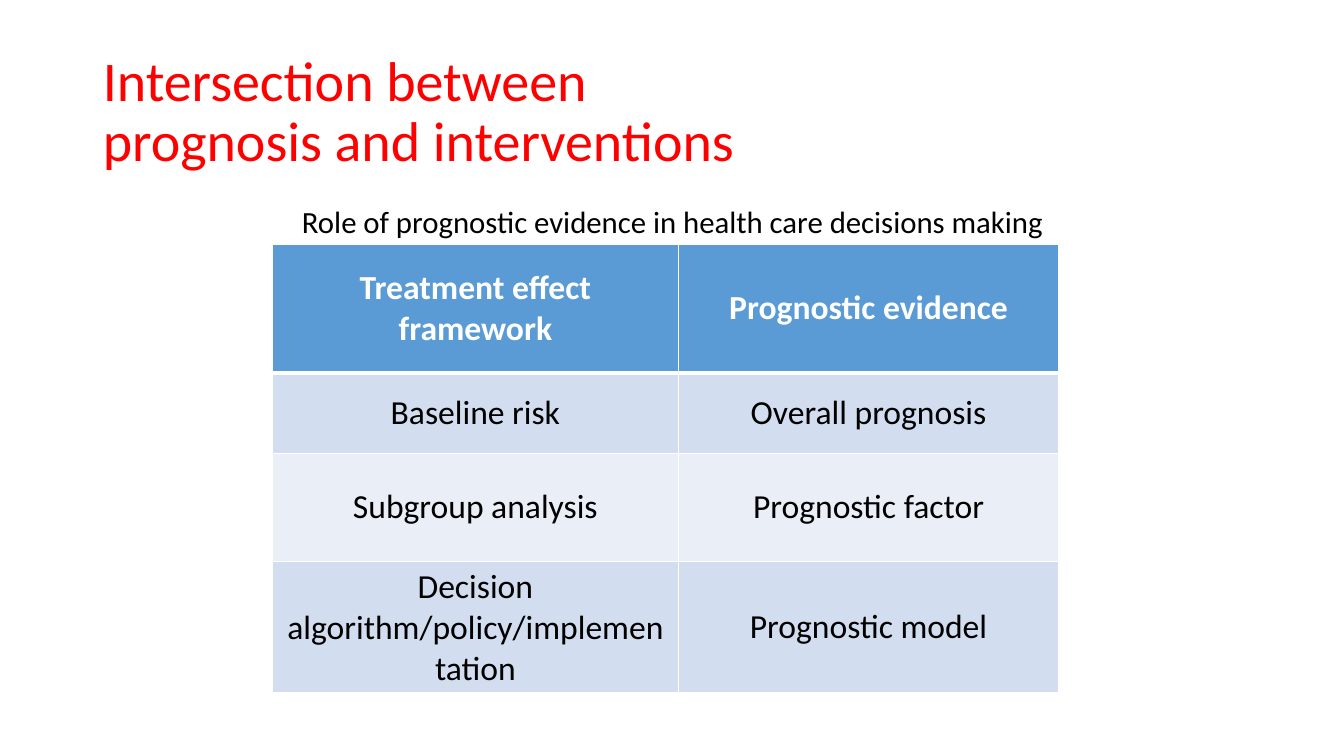
import pptx
import pptx.util
import pptx.dml.color
import pptx.enum.text
import pptx.oxml
from pptx.util import Inches

# Content
TITLE = "Intersection between\vprognosis and interventions"
CAPTION = "Role of prognostic evidence in health care decisions making"
ROWS = [
    ("Treatment effect framework", "Prognostic evidence"),
    ("Baseline risk", "Overall prognosis"),
    ("Subgroup analysis", "Prognostic factor"),
    ("Decision algorithm/policy/implementation", "Prognostic model"),
]
COLUMN_WIDTHS = (4.03, 3.77)
ROW_HEIGHTS = (1.28, 0.8, 1.07, 1.07)
HEADER_FILL, BAND_FILLS = "5B9BD5", ("EAEFF7", "D2DEEF")
WHITE, BLACK, RED = "FFFFFF", "000000", "FF0000"
LEFT, WIDTH = Inches(0.92), Inches(11.5)
MIDDLE = pptx.enum.text.MSO_ANCHOR.MIDDLE
ALIGN = pptx.enum.text.PP_ALIGN


def color(value):
    return pptx.dml.color.RGBColor.from_string(value)


def format_text(frame, size, text_color, align, spacing=1.0, bold=False):
    for paragraph in frame.paragraphs:
        paragraph.alignment = align
        paragraph.line_spacing = spacing
        for run in paragraph.runs:
            run.font.name = "Calibri"
            run.font.size = pptx.util.Pt(size)
            run.font.bold = bold
            run.font.color.rgb = color(text_color)


def add_borders(cell, bottom_width):
    properties = cell._tc.get_or_add_tcPr()
    widths = {"lnL": 1, "lnR": 1, "lnT": 1, "lnB": bottom_width}
    for position, (side, width) in enumerate(widths.items()):
        properties.insert(position, pptx.oxml.parse_xml(
            f'<a:{side} xmlns:a="http://schemas.openxmlformats.org/drawingml/2006/main" '
            f'w="{pptx.util.Pt(width)}"><a:solidFill><a:srgbClr val="{WHITE}"/>'
            f'</a:solidFill></a:{side}>'))


prs = pptx.Presentation()
prs.slide_width, prs.slide_height = Inches(13.33), Inches(7.5)
slide = prs.slides.add_slide(prs.slide_layouts.get_by_name("Title Only"))

# Title
title = slide.shapes.title
title.left, title.top, title.width, title.height = LEFT, Inches(0.4), WIDTH, Inches(1.45)
title.text_frame.text = TITLE
title.text_frame.vertical_anchor = MIDDLE
format_text(title.text_frame, 40, RED, ALIGN.LEFT, 0.9)

# Table caption
caption = slide.shapes.add_textbox(LEFT, Inches(2), WIDTH, Inches(0.42)).text_frame
caption.word_wrap = True
caption.text = CAPTION
format_text(caption, 22, BLACK, ALIGN.CENTER, 0.9)

# Framework table
framework = slide.shapes.add_table(
    len(ROWS), len(COLUMN_WIDTHS), Inches(2.7), Inches(2.42),
    Inches(sum(COLUMN_WIDTHS)), Inches(sum(ROW_HEIGHTS))).table
for column, width in zip(framework.columns, COLUMN_WIDTHS):
    column.width = Inches(width)
for r, (texts, height) in enumerate(zip(ROWS, ROW_HEIGHTS)):
    framework.rows[r].height = Inches(height)
    header = r == 0
    for c, text in enumerate(texts):
        cell = framework.cell(r, c)
        cell.text_frame.text = text
        cell.vertical_anchor = MIDDLE
        cell.fill.solid()
        cell.fill.fore_color.rgb = color(HEADER_FILL if header else BAND_FILLS[r % 2])
        format_text(cell.text_frame, 24, WHITE if header else BLACK, ALIGN.CENTER, bold=header)
        add_borders(cell, 3 if header else 1)

prs.save("out.pptx")
